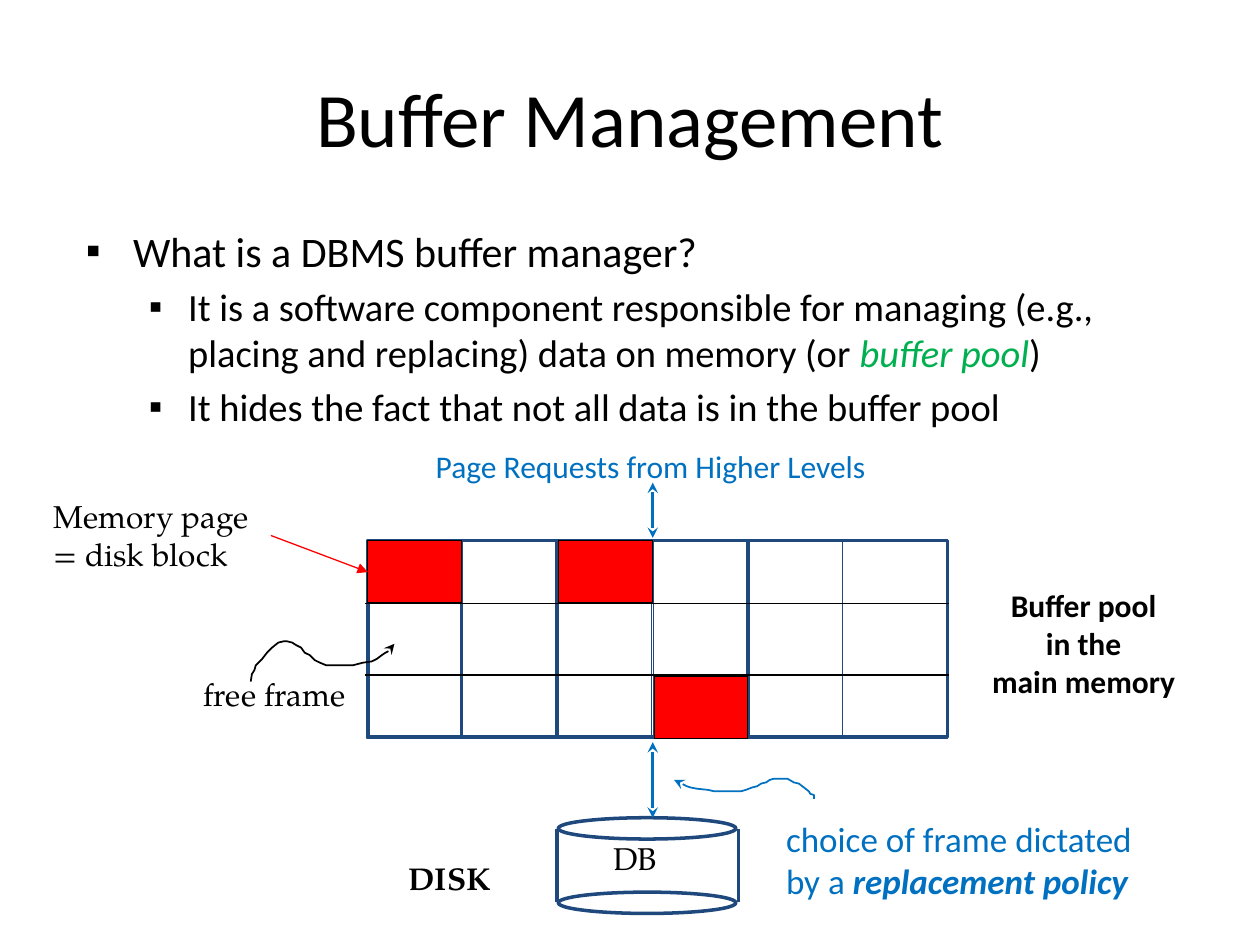
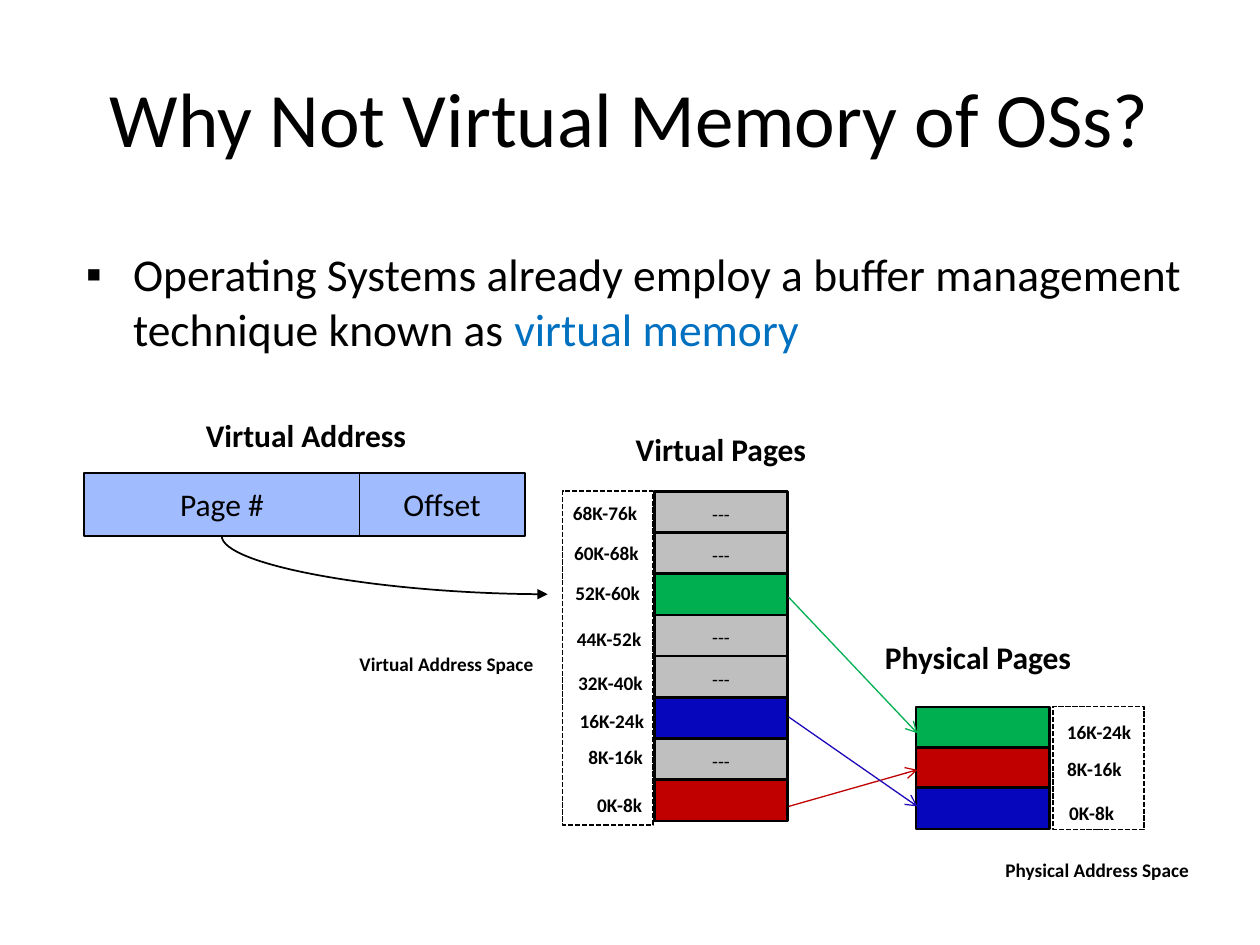
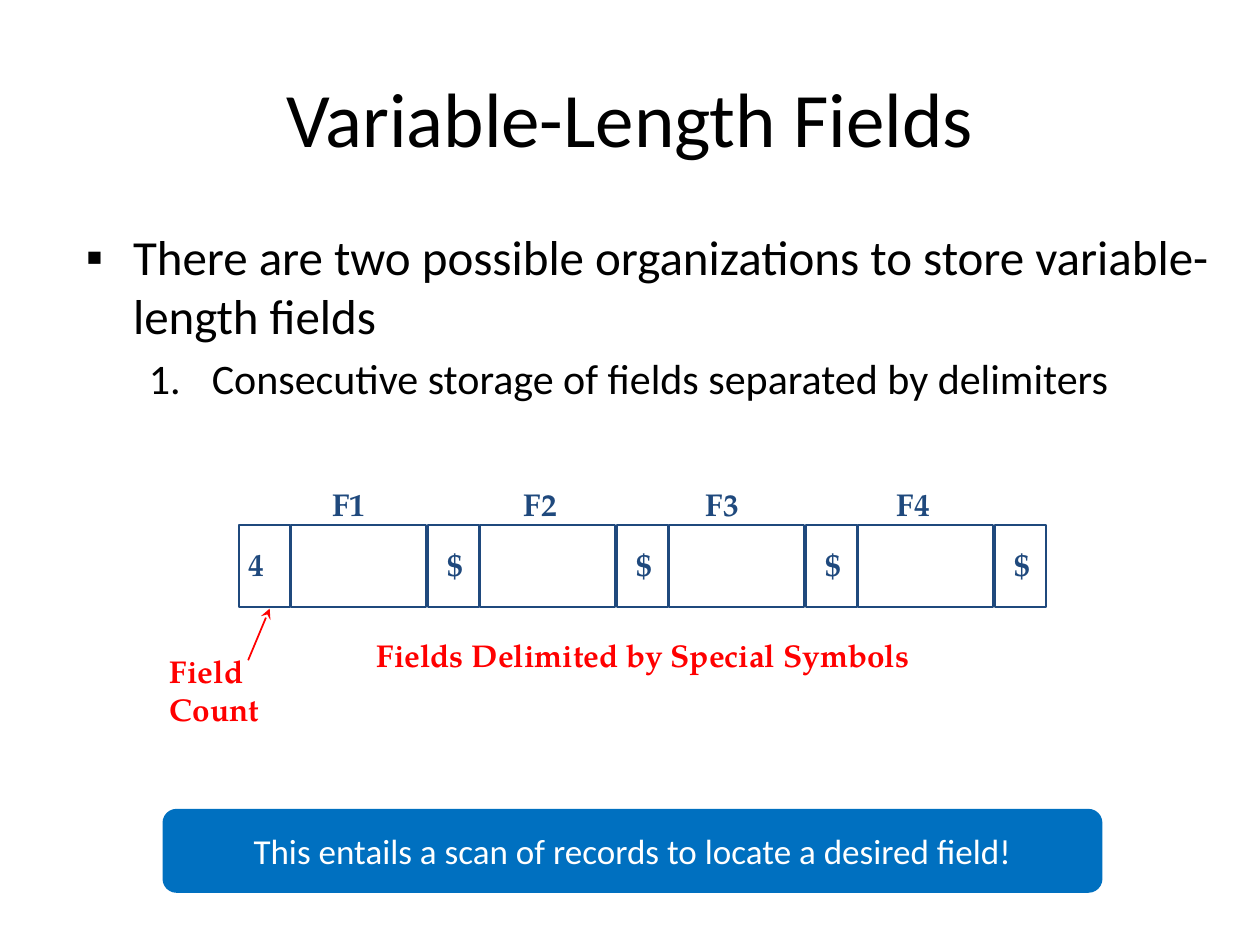
from dataclasses import dataclass

from lxml.etree import SubElement
from pptx import Presentation
from pptx.dml.color import RGBColor
from pptx.enum.dml import MSO_LINE
from pptx.enum.shapes import MSO_CONNECTOR as Link, MSO_SHAPE as Shape
from pptx.enum.text import MSO_ANCHOR as Anchor, MSO_AUTO_SIZE as AutoSize, PP_ALIGN as Align
from pptx.oxml.ns import qn
from pptx.util import Pt


@dataclass(frozen=True)
class Theme:
    sans: str = "Calibri"
    serif: str = "TeX Gyre Pagella"
    black: str = "000000"
    white: str = "FFFFFF"
    navy: str = "1F497D"
    blue: str = "0070C0"
    green: str = "00B050"
    red: str = "FF0000"
    dark_red: str = "C00000"
    deep_blue: str = "0606BC"
    link_blue: str = "1D08BA"
    gray: str = "BFBFBF"
    pale_blue: str = "A0BBFE"
    title: int = 44
    note: int = 20
    label: int = 18
    small: int = 11


THEME = Theme()
TITLE_BOX = (36, 21.6, 648, 90)
SQUARE = "▪"
# Left indent and hanging indent of each kind of list line
INDENTS = {"top": (0, 27, 27), "sub": (1, 58.5, 22.5), "number": (1, 72, 36)}

# Each list line: kind, size, runs; each run: text and its own style
BUFFER_LIST = [
    ("top", 24, [("What is a DBMS buffer manager?", {})]),
    ("sub", 22, [
        ("It is a software component responsible for managing (e.g., placing and replacing) "
         "data on memory (or ", {}),
        ("buffer pool", {"color": THEME.green, "italic": True}),
        (")", {})]),
    ("sub", 22, [("It hides the fact that not all data is in the buffer pool", {})]),
]
VIRTUAL_LIST = [
    ("top", 26, [
        ("Operating Systems already employ a buffer management technique known as ", {}),
        ("virtual memory", {"color": THEME.blue})]),
]
FIELDS_LIST = [
    ("top", 28, [("There are two possible organizations to store variable-length fields", {})]),
    ("number", 24, [("Consecutive storage of fields separated by delimiters", {})]),
]

USED_FRAMES = [(0, 308.9), (2, 308.9), (3, 386.6)]  # column, top
FREE_FRAME_CURVE = [
    (143.3, 389.5), (144, 385.2), (145.4, 383), (146.2, 380.2), (149.8, 376.6), (152.6, 373),
    (155.5, 370.1), (159.1, 367.2), (162, 366.5), (164.2, 366.5), (167, 367.2), (169.2, 368.6),
    (172.1, 370.1), (174.2, 373), (177.1, 374.4), (180, 377.3), (182.9, 378.7), (186.5, 380.2),
    (201.6, 380.2), (207.4, 378.7), (212.4, 378), (215.3, 376.6), (218.2, 374.4), (220.3, 373),
    (223.2, 371.5), (225.4, 367.9)]
POLICY_CURVE = [
    (465.1, 456.5), (465.1, 454.3), (463, 453.6), (462.2, 452.2), (459.4, 450), (456.5, 447.8),
    (453.6, 447.1), (450, 445), (442.1, 445), (439.9, 445.7), (437.8, 447.1), (434.9, 447.8),
    (432.7, 449.3), (429.8, 450), (426.2, 451.4), (423.4, 452.2), (408.2, 452.2),
    (404.6, 451.4), (398.2, 450.7), (394.6, 450), (392.4, 449.3), (389.5, 447.8),
    (387.4, 447.1), (385.2, 445.7)]

# Page fill, address range, left and top of the range label
VIRTUAL_PAGES = [
    (THEME.gray, "68K-76k", 327.3, 284.4), (THEME.gray, "60K-68k", 328.1, 307.4),
    (THEME.green, "52K-60k", 328.8, 330.3), (THEME.gray, "44K-52k", 329.6, 356.4),
    (THEME.gray, "32K-40k", 330.4, 381.6), (THEME.deep_blue, "16K-24k", 331.2, 403.2),
    (THEME.gray, "8K-16k", 336.2, 424.1), (THEME.dark_red, "0K-8k", 341.3, 451.4)]
PHYSICAL_PAGES = [
    (THEME.green, "16K-24k", 609.6, 409.7), (THEME.dark_red, "8K-16k", 609.8, 431),
    (THEME.deep_blue, "0K-8k", 611, 455.8)]
PAGE_LINKS = [(THEME.dark_red, 460.8, 439.9), (THEME.green, 341.3, 419),
              (THEME.link_blue, 409.7, 460.8)]  # color, start height, end height
HEADINGS = [("Virtual Pages", 322, 242.4), ("Virtual Address", 84.9, 234),
            ("Physical Pages", 468.9, 361)]
SPACE_NAMES = [("Physical Address Space", 574.5, 488.2), ("Virtual Address Space", 205.4, 370.8)]
ADDRESS_PARTS = [("Page #", 48.1, 157.5), ("Offset", 205.4, 94.5)]

RECORD_MARKS = ["4", "$", "$", "$", "$"]
FIELD_NAMES = ["F1", "F2", "F3", "F4"]
FIELD_TABS = [109.2, 213.3, 322.4]


def rgb(color):
    return RGBColor.from_string(color)


def points(values):
    return [Pt(value) for value in values]


def add_span(para, text, size, color=THEME.black, font=THEME.sans, bold=False, italic=False):
    span = para.add_run()
    span.text = text
    span.font.size, span.font.name = Pt(size), font
    span.font.bold, span.font.italic = bold, italic
    span.font.color.rgb = rgb(color)


def write(frame, lines, size=THEME.label, align=Align.LEFT, spaced=False, **style):
    """Fill a frame; a line is a string or a list of (text, style) runs."""
    for number, line in enumerate(lines):
        para = frame.paragraphs[0] if number == 0 else frame.add_paragraph()
        para.alignment = align
        if spaced:
            para.line_spacing, para.space_after = 1.15, Pt(10)
        for text, own in [(line, {})] if isinstance(line, str) else line:
            add_span(para, text, size, **{**style, **own})


def label(page, at, lines, wrap=False, inset=True, **style):
    box = page.shapes.add_textbox(*points(at))
    frame = box.text_frame
    frame.word_wrap = wrap
    if not inset:
        frame.margin_left = frame.margin_right = frame.margin_top = frame.margin_bottom = 0
    write(frame, lines, **style)
    return box


def small_label(page, text, left, top, width):
    label(page, (left, top, width, 15.8), [text], inset=False,
          size=THEME.small, bold=True, spaced=True)


def set_line(line, color, width, head=None, tail=None):
    line.color.rgb = rgb(color)
    line.width = Pt(width)
    for tag, kind in (("a:headEnd", head), ("a:tailEnd", tail)):
        if kind:
            SubElement(line._get_or_add_ln(), qn(tag), type=kind)


def panel(page, at, fill=None, line=None, width=1, shape=Shape.RECTANGLE):
    box = page.shapes.add_shape(shape, *points(at))
    box.shadow.inherit = False
    if fill:
        box.fill.solid()
        box.fill.fore_color.rgb = rgb(fill)
    else:
        box.fill.background()
    if line:
        set_line(box.line, line, width)
    else:
        box.line.fill.background()
    box.text_frame.vertical_anchor = Anchor.MIDDLE
    return box


def connect(page, start, end, color, width, head=None, tail=None, kind=Link.STRAIGHT):
    link = page.shapes.add_connector(kind, *points(start + end))
    set_line(link.line, color, width, head, tail)
    SubElement(link._element.spPr, qn("a:effectLst"))
    return link


def connect_curved(page, start, end, color, width, tail):
    """Quarter curve that leaves downward and arrives rightward."""
    (x1, y1), (x2, y2) = start, end
    middle_x, middle_y = (x1 + x2) / 2, (y1 + y2) / 2
    half_w, half_h = (y2 - y1) / 2, (x2 - x1) / 2
    link = connect(page, (middle_x - half_w, middle_y - half_h),
                   (middle_x + half_w, middle_y + half_h), color, width,
                   tail=tail, kind=Link.CURVE)
    properties = link._element.spPr
    properties.find(qn("a:prstGeom")).set("prst", "curvedConnector2")
    turn = properties.find(qn("a:xfrm"))
    turn.set("rot", str(270 * 60000))
    turn.set("flipH", "1")


def squiggle(page, route, color):
    start, *rest = [points(spot) for spot in route]
    builder = page.shapes.build_freeform(*start, scale=1.0)
    builder.add_line_segments(rest, close=False)
    curve = builder.convert_to_shape()
    curve.shadow.inherit = False
    curve.fill.background()
    set_line(curve.line, color, 1, tail="stealth")


def place(shape, at):
    shape.left, shape.top, shape.width, shape.height = points(at)


def add_page(deck, title, body_at, lines):
    page = deck.slides.add_slide(deck.slide_layouts[1])
    heading, body = page.shapes.title, page.placeholders[1]
    place(heading, TITLE_BOX)
    write(heading.text_frame, [title], size=THEME.title, align=Align.CENTER)
    place(body, body_at)
    frame = body.text_frame
    frame.auto_size = AutoSize.NONE
    for number, (kind, size, runs) in enumerate(lines):
        para = frame.paragraphs[0] if number == 0 else frame.add_paragraph()
        para.level, left, hanging = INDENTS[kind]
        props = para._p.get_or_add_pPr()
        props.set("marL", str(Pt(left)))
        props.set("indent", str(-Pt(hanging)))
        if kind == "number":
            SubElement(props, qn("a:buFont"), typeface="+mj-lt")
            SubElement(props, qn("a:buAutoNum"), type="arabicPeriod")
        else:
            SubElement(props, qn("a:buFont"), typeface="Arial")
            SubElement(props, qn("a:buChar"), char=SQUARE)
        for text, style in runs:
            add_span(para, text, size, **style)
    return page


def draw_buffer_pool(page):
    left, top, pitch, frame_w = 209.8, 308.9, 54.55, 53.5
    panel(page, (210.2, top, 331.2, 112.3), line=THEME.navy, width=2)
    for column in range(5):
        panel(page, (left + column * pitch, top, frame_w, 113), line=THEME.navy)
    for height in (344.9, 385.9):
        connect(page, (208.8, height), (542.2, height), THEME.black, 1)
    for column, frame_top in USED_FRAMES:
        panel(page, (left + 0.4 + column * pitch, frame_top, frame_w, 35.3),
              THEME.red, THEME.black, 0.75)


def draw_disk(page):
    for top in (467.3, 509.8):
        panel(page, (319, top, 101.5, 12.2), line=THEME.navy, width=2, shape=Shape.OVAL)
    for side in (318.2, 421.9):
        connect(page, (side, 473.8), (side, 515.5), THEME.navy, 2)
    label(page, (343.4, 475.9, 51.1, 36), ["DB"], wrap=True, font=THEME.serif)
    label(page, (226.5, 487.4, 61.2, 28.8), ["DISK"], font=THEME.serif, bold=True)


def build_buffer_page(deck):
    page = add_page(deck, "Buffer Management", (41.8, 125.1, 648, 403.2), BUFFER_LIST)
    draw_buffer_pool(page)
    draw_disk(page)
    label(page, (23.5, 280.5, 131.8, 50.4), ["Memory page", "= disk block"], font=THEME.serif)
    squiggle(page, FREE_FRAME_CURVE, THEME.black)
    label(page, (109, 382.3, 95.8, 28.8), ["free frame"], font=THEME.serif)
    label(page, (241.9, 252, 262.8, 28.8), ["Page Requests from Higher Levels"], color=THEME.blue)
    label(page, (558.7, 331.4, 121, 72.7), ["Buffer pool", "in the", "main memory"],
          align=Align.CENTER, bold=True)
    squiggle(page, POLICY_CURVE, THEME.blue)
    label(page, (442.1, 463.7, 213.8, 55.4),
          ["choice of frame dictated",
           [("by a ", {}), ("replacement policy", {"bold": True, "italic": True})]],
          size=THEME.note, color=THEME.blue)
    for top, bottom in ((275.8, 307.4), (424.1, 467.3)):
        connect(page, (373, top), (373, bottom), THEME.blue, 2, "stealth", "stealth")
    connect(page, (154.8, 306), (210.2, 326.9), THEME.red, 0.75, tail="triangle")


def draw_pages(page, pages, left, top, pitch):
    for row, (fill, addresses, label_left, label_top) in enumerate(pages):
        box = panel(page, (left, top + row * pitch, 76.3, 23.6), fill, THEME.black, 1.5)
        if fill == THEME.gray:
            write(box.text_frame, ["---"], size=THEME.small, align=Align.CENTER, spaced=True)
        small_label(page, addresses, label_left, label_top, 5.6 * len(addresses))


def build_virtual_memory_page(deck):
    page = add_page(deck, "Why Not Virtual Memory of OSs?", (41.8, 137, 666, 403.2),
                    VIRTUAL_LIST)
    draw_pages(page, VIRTUAL_PAGES, 373.9, 280.7, 23.55)
    draw_pages(page, PHYSICAL_PAGES, 523.4, 403.9, 23.1)
    for color, start, end in PAGE_LINKS:
        connect(page, (450.7, start), (524.2, end), color, 0.75, tail="arrow")
    for text, left, width in ADDRESS_PARTS:
        box = panel(page, (left, 270.2, width, 36), THEME.pale_blue, THEME.black)
        box.text_frame.word_wrap = False
        write(box.text_frame, [text], align=Align.CENTER)
    connect_curved(page, (126.7, 306.2), (313, 339.6), THEME.black, 1, "triangle")
    for text, left, top in HEADINGS:
        label(page, (left, top, 180, 28.8), [text], wrap=True, align=Align.CENTER, bold=True)
    for text, left, top in SPACE_NAMES:
        small_label(page, text, left, top, 107.3)
    for at in ((321.4, 280.6, 51.8, 190.8), (601.9, 403.7, 51.8, 70.4)):
        panel(page, at, line=THEME.black).line.dash_style = MSO_LINE.SQUARE_DOT


def draw_record(page):
    left, top, height, pitch = 136.8, 300.2, 46.8, 108
    style = {"font": THEME.serif, "bold": True, "color": THEME.navy}
    for number, mark in enumerate(RECORD_MARKS):
        start = left + number * pitch
        panel(page, (start, top, 28.8, height), line=THEME.navy)
        if number < len(FIELD_NAMES):
            panel(page, (start + 29.5, top, 77.2, height), line=THEME.navy)
        mark_left = start + (3.6 if number else -1.8)
        label(page, (mark_left, 308, 23.8, 28.8), [mark], **style)
    names = label(page, (182.9, 273.6, 359.3, 28.8), ["\t".join(FIELD_NAMES)], wrap=True, **style)
    props = names.text_frame.paragraphs[0]._p.get_or_add_pPr()
    stops = SubElement(props, qn("a:tabLst"))
    for stop in FIELD_TABS:
        SubElement(stops, qn("a:tab"), pos=str(Pt(stop)), algn="l")


def build_fields_page(deck):
    page = add_page(deck, "Variable-Length Fields", (41.8, 126, 678.2, 403.2), FIELDS_LIST)
    draw_record(page)
    connect(page, (141.8, 377.3), (154.1, 347.8), THEME.red, 1, tail="stealth")
    style = {"font": THEME.serif, "bold": True, "color": THEME.red}
    label(page, (90, 369.1, 66.2, 50.4), ["Field", "Count"], **style)
    label(page, (208.1, 360, 322.6, 28.8), ["Fields Delimited by Special Symbols"], **style)
    banner = panel(page, (92.9, 462.2, 537.1, 48), THEME.blue, shape=Shape.ROUNDED_RECTANGLE)
    write(banner.text_frame, ["This entails a scan of records to locate a desired field!"],
          size=THEME.note, align=Align.CENTER, color=THEME.white)


def main():
    deck = Presentation()
    deck.slide_width, deck.slide_height = Pt(720), Pt(540)
    build_buffer_page(deck)
    build_virtual_memory_page(deck)
    build_fields_page(deck)
    deck.save("out.pptx")


if __name__ == "__main__":
    main()
